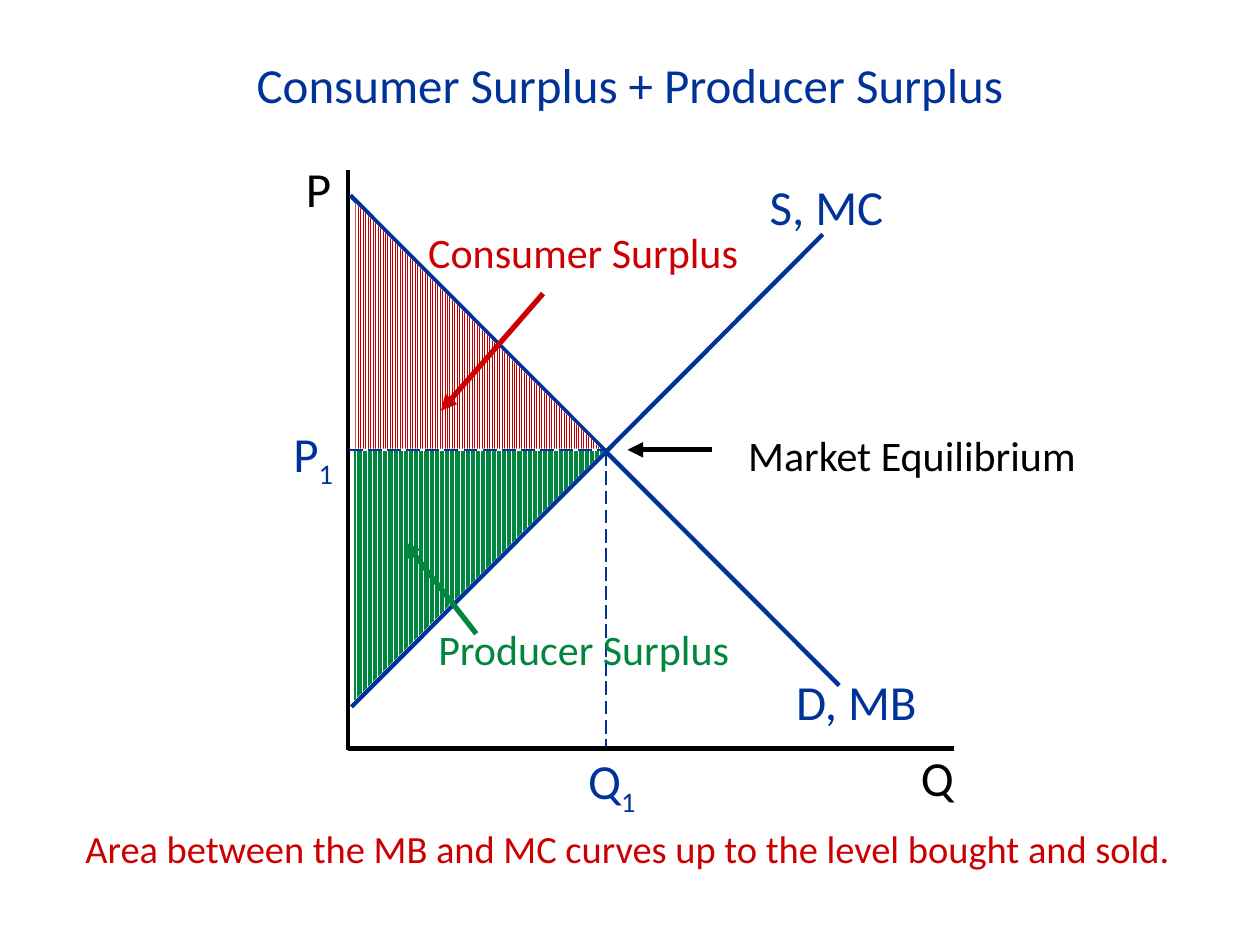
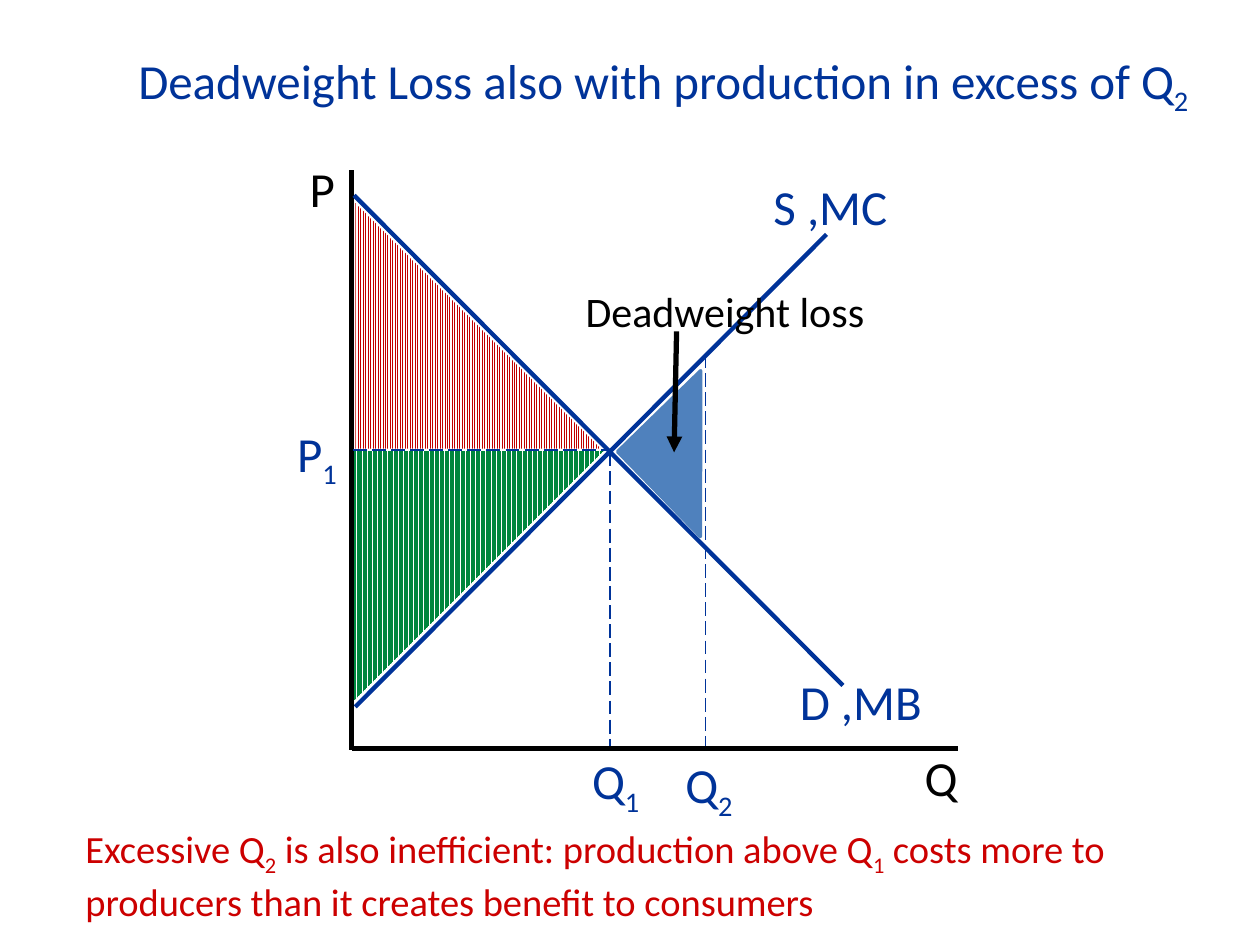
from dataclasses import dataclass

from lxml import etree
from pptx import Presentation
from pptx.dml.color import RGBColor
from pptx.enum.dml import MSO_LINE, MSO_PATTERN
from pptx.enum.shapes import MSO_CONNECTOR, MSO_SHAPE
from pptx.enum.text import MSO_ANCHOR, MSO_AUTO_SIZE, PP_ALIGN
from pptx.oxml.ns import qn
from pptx.slide import Slide
from pptx.util import Inches, Pt

STRAIGHT = MSO_CONNECTOR.STRAIGHT
RIGHT_TRIANGLE = MSO_SHAPE.RIGHT_TRIANGLE
LONG_DASH = MSO_LINE.LONG_DASH
LIGHT_STRIPES = MSO_PATTERN.LIGHT_VERTICAL
DARK_STRIPES = MSO_PATTERN.DARK_VERTICAL
LEFT, CENTER = PP_ALIGN.LEFT, PP_ALIGN.CENTER
TOP, MIDDLE = MSO_ANCHOR.TOP, MSO_ANCHOR.MIDDLE
FIT_SHAPE = MSO_AUTO_SIZE.SHAPE_TO_FIT_TEXT

# Grid: 100 columns by 75 rows
SLIDE_W, SLIDE_H = Inches(10), Inches(7.5)
COLUMN, ROW = SLIDE_W / 100, SLIDE_H / 75

FONT = "Calibri"
BLUE, RED, GREEN = "003399", "CC0000", "00863D"
BLACK, WHITE, STRIPE_RED, LOSS_BLUE = "000000", "FFFFFF", "C00000", "4F81BD"
AXIS_SIZE, CALLOUT_SIZE, NOTE_SIZE = 28, 24, 22

# Market equilibrium and the ends of the axes
EQ_COL, EQ_ROW = 48.1, 35.7
AXIS_COL, AXIS_ROW = 27.6, 59.4


@dataclass(frozen=True)
class Label:
    """Text on the grid; "_" lowers the character that follows it."""
    text: str
    col: float
    row: float
    cols: float
    rows: float
    color: str = BLUE
    size: float = AXIS_SIZE
    spacing: float = 1.0
    wrap: bool = True
    align: PP_ALIGN = LEFT
    anchor: MSO_ANCHOR = TOP


@dataclass(frozen=True)
class Stroke:
    start: tuple[float, float]
    end: tuple[float, float]
    color: str = BLUE
    width: float = 2.5
    dashed: bool = False
    arrow: bool = False


@dataclass(frozen=True)
class Area:
    col: float
    row: float
    cols: float
    rows: float
    color: str
    rotation: float = 0
    stripes: MSO_PATTERN | None = None


def rgb(hex_color: str) -> RGBColor:
    return RGBColor.from_string(hex_color)


def across(cols: float) -> int:
    return round(cols * COLUMN)


def down(rows: float) -> int:
    return round(rows * ROW)


def draw_label(slide: Slide, label: Label, shift: float = 0) -> None:
    box = slide.shapes.add_textbox(across(label.col + shift), down(label.row),
                                   across(label.cols), down(label.rows))
    frame = box.text_frame
    frame.word_wrap = label.wrap
    frame.auto_size = FIT_SHAPE
    frame.vertical_anchor = label.anchor
    paragraph = frame.paragraphs[0]
    paragraph.alignment = label.align
    paragraph.line_spacing = label.spacing

    first, *rest = label.text.split("_")
    pieces = [(first, False)]
    for part in rest:
        pieces += [(part[0], True), (part[1:], False)]
    for text, lowered in pieces:
        if not text:
            continue
        run = paragraph.add_run()
        run.text = text
        run.font.name = FONT
        run.font.size = Pt(label.size)
        run.font.color.rgb = rgb(label.color)
        if lowered:
            run.font._element.set("baseline", "-25000")


def draw_stroke(slide: Slide, stroke: Stroke, shift: float = 0) -> None:
    (x1, y1), (x2, y2) = stroke.start, stroke.end
    connector = slide.shapes.add_connector(
        STRAIGHT, across(x1 + shift), down(y1), across(x2 + shift), down(y2))
    line = connector.line
    line.color.rgb = rgb(stroke.color)
    line.width = Pt(stroke.width)
    if stroke.dashed:
        line.dash_style = LONG_DASH
    properties = connector._element.spPr
    if stroke.arrow:
        outline = properties.find(qn("a:ln"))
        etree.SubElement(outline, qn("a:tailEnd"), type="triangle")
    etree.SubElement(properties, qn("a:effectLst"))


def draw_area(slide: Slide, area: Area) -> None:
    triangle = slide.shapes.add_shape(RIGHT_TRIANGLE, across(area.col), down(area.row),
                                      across(area.cols), down(area.rows))
    triangle.shadow.inherit = False
    triangle.rotation = area.rotation
    fill, line = triangle.fill, triangle.line
    if area.stripes is None:
        fill.solid()
        fill.fore_color.rgb = rgb(area.color)
        line.color.rgb = rgb(area.color)
        line.width = Pt(2)
    else:
        fill.patterned()
        fill.pattern = area.stripes
        fill.fore_color.rgb = rgb(area.color)
        fill.back_color.rgb = rgb(WHITE)
        line.fill.background()


def quantity_label(text: str, col: float, row: float) -> Label:
    return Label(text, col, row, 7.5, 4.8, spacing=0.8)


def callout(text: str, col: float, row: float, cols: float, color: str = BLACK,
            wrap: bool = True) -> Label:
    return Label(text, col, row, cols, 5, color, CALLOUT_SIZE, wrap=wrap)


def pointer(start: tuple[float, float], end: tuple[float, float],
            color: str = BLACK) -> Stroke:
    return Stroke(start, end, color, 3, arrow=True)


def guide(start: tuple[float, float], end: tuple[float, float]) -> Stroke:
    return Stroke(start, end, width=1, dashed=True)


# Supply and demand diagram shared by both slides
MARKET_LINES = (
    Stroke((27.9, 56.1), (65.3, 18.6)),  # supply
    Stroke((AXIS_COL, 13.5), (AXIS_COL, 59.5), BLACK),
    Stroke((AXIS_COL, AXIS_ROW), (75.7, AXIS_ROW), BLACK),
    Stroke((27.8, 15.5), (66.6, 54.4)),  # demand
    guide((27.7, EQ_ROW), (EQ_COL, EQ_ROW)),
    guide((EQ_COL, EQ_ROW + 0.2), (EQ_COL, 59.2)),
)
MARKET_LABELS = (
    Label("Q", 72.1, 58.8, 5.1, 5.7, BLACK),
    Label("P", 23.3, 13, 4.5, 4.9, BLACK, spacing=0.8),
    Label("P_1", 22.3, 33.6, 5.8, 4.9, spacing=0.8),
    quantity_label("Q_1", 45.7, 59.6),
)
SURPLUSES = (
    Area(28.2, 16.1, 19.5, 19.5, STRIPE_RED, stripes=LIGHT_STRIPES),
    Area(28.1, 35.8, 19.8, 19.8, GREEN, rotation=90, stripes=DARK_STRIPES),
)


def draw_market(slide: Slide, title: str, title_cols: float, note: str,
                note_rows: float, supply: str, demand: str, shift: float) -> None:
    for stroke in MARKET_LINES:
        draw_stroke(slide, stroke, shift)
    curve_labels = (Label(demand, 62.2, 52.8, 14.4, 5.7),
                    Label(supply, 60.1, 13.5, 12.5, 5.7))
    for label in MARKET_LABELS + curve_labels:
        draw_label(slide, label, shift)
    draw_label(slide, Label(title, 7, 3.8, title_cols, 5.7, align=CENTER, anchor=MIDDLE))
    for surplus in SURPLUSES:
        draw_area(slide, surplus)
    draw_label(slide, Label(note, 5.8, 65, 88.3, note_rows, RED, NOTE_SIZE))


def build_total_surplus(slide: Slide) -> None:
    draw_market(slide, "Consumer Surplus + Producer Surplus", 86,
                "Area between the MB and MC curves up to the level bought and sold.",
                4.7, "S, MC", "D, MB", shift=0)
    draw_label(slide, callout("Producer Surplus", 33.8, 49, 26.8, GREEN))
    draw_stroke(slide, pointer((37.8, 50.3), (32.1, 43), GREEN))
    draw_label(slide, callout("Consumer Surplus", 33, 17.5, 26.8, RED))
    draw_stroke(slide, pointer((43.1, 23.3), (35, 32.6), RED))
    draw_stroke(slide, pointer((56.5, EQ_ROW), (49.8, EQ_ROW)))
    draw_label(slide, callout("Market Equilibrium", 58.4, 33.6, 28.3, wrap=False))


def build_deadweight_loss(slide: Slide) -> None:
    draw_market(slide, "Deadweight Loss also with production in excess of Q_2", 91.3,
                "Excessive Q_2 is also inefficient: production above Q_1 costs more to "
                "producers than it creates benefit to consumers",
                8.4, "S ,MC", "D ,MB", shift=0.3)
    draw_stroke(slide, guide((56, 28.1), (56, 59.2)))
    draw_label(slide, quantity_label("Q_2", 53.4, 59.9))
    draw_label(slide, callout("Deadweight loss", 45.5, 22.2, 24.3, wrap=False))
    draw_area(slide, Area(50.9, 31.4, 9.4, 9.2, LOSS_BLUE, rotation=45.7))
    draw_stroke(slide, pointer((53.7, 26.3), (53.5, 35.9)))


def main() -> None:
    deck = Presentation()
    deck.slide_width, deck.slide_height = SLIDE_W, SLIDE_H
    blank = deck.slide_layouts[6]
    for build in (build_total_surplus, build_deadweight_loss):
        build(deck.slides.add_slide(blank))
    deck.save("out.pptx")


if __name__ == "__main__":
    main()
